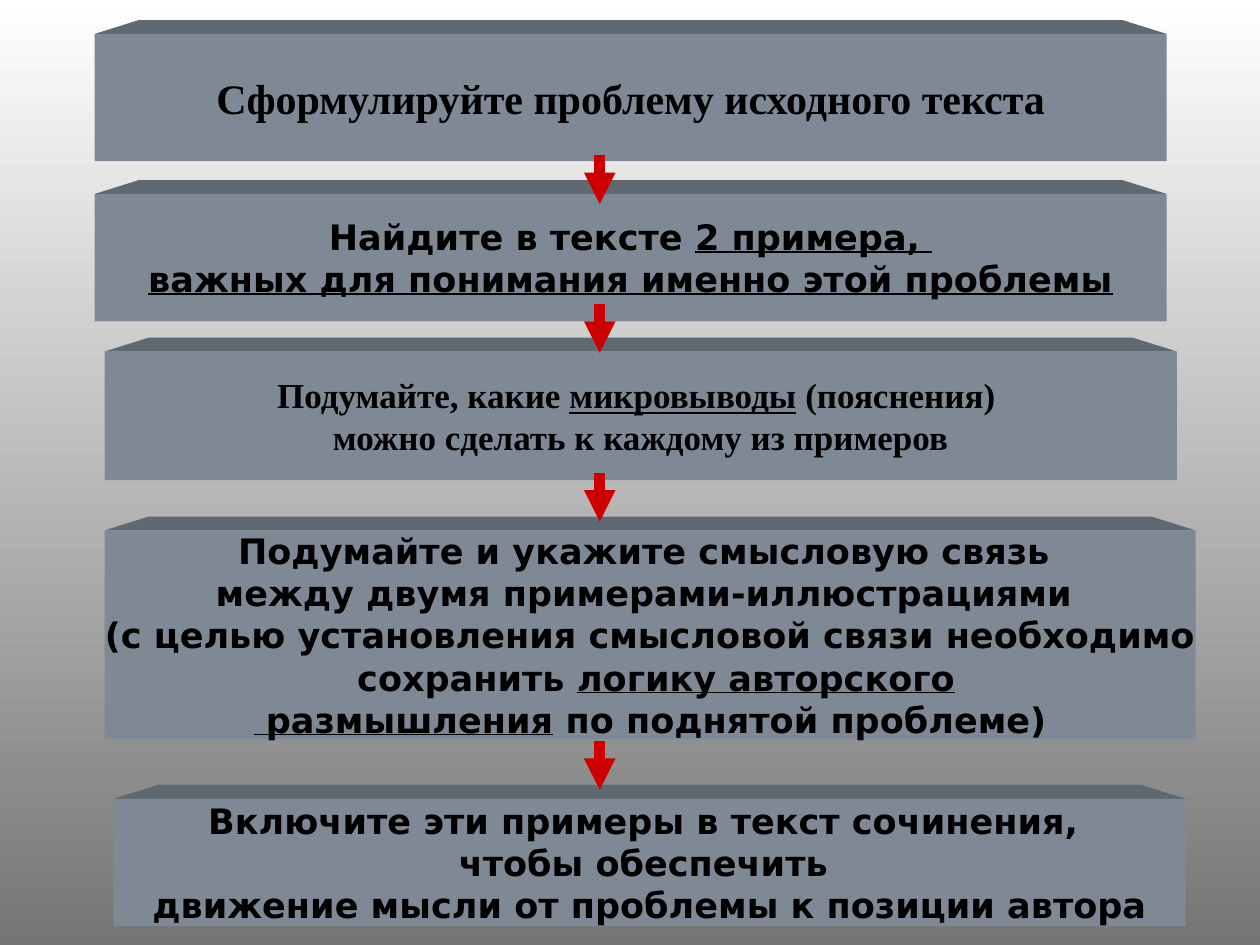
from dataclasses import dataclass

from lxml import etree
from pptx import Presentation
from pptx.dml.color import RGBColor
from pptx.enum.shapes import MSO_CONNECTOR, MSO_SHAPE
from pptx.enum.text import MSO_ANCHOR, PP_ALIGN
from pptx.oxml.ns import qn
from pptx.util import Inches, Pt

RECTANGLE = MSO_SHAPE.RECTANGLE
TRAPEZOID = MSO_SHAPE.TRAPEZOID
STRAIGHT = MSO_CONNECTOR.STRAIGHT
MIDDLE = MSO_ANCHOR.MIDDLE
CENTER = PP_ALIGN.CENTER


@dataclass(frozen=True)
class Theme:
    sky: RGBColor = RGBColor(0xFF, 0xFF, 0xFF)
    ground: RGBColor = RGBColor(0x75, 0x75, 0x75)
    front: RGBColor = RGBColor(0x7F, 0x89, 0x95)
    top: RGBColor = RGBColor(0x60, 0x69, 0x72)
    text: RGBColor = RGBColor(0, 0, 0)
    arrow: RGBColor = RGBColor(0xCC, 0, 0)
    serif: str = "Times New Roman"
    sans: str = "DejaVu Sans"
    heading_size: int = 24
    body_size: int = 20
    arrow_width: int = 6


THEME = Theme()

# Depth of the slabs and the geometry of the arrows, in inches
TOP_HEIGHT, TOP_INSET = 0.11, 0.35
ARROW_X, ARROW_LENGTH = 4.76, 0.39
ARROW_STARTS = (1.23, 2.41, 3.75, 5.88)

# Each step: left, top, width, height, font, size, lines.
# A line is a list of spans; a span is its text and whether it is underlined.
STEPS = [
    (0.75, 0.27, 8.51, 1.01, THEME.serif, THEME.heading_size, [
        [("Сформулируйте проблему исходного текста", False)],
    ]),
    (0.75, 1.54, 8.51, 1.01, THEME.sans, THEME.body_size, [
        [("Найдите в тексте ", False), ("2 примера, ", True)],
        [("важных для понимания именно этой проблемы", True)],
    ]),
    (0.83, 2.79, 8.51, 1.02, THEME.serif, THEME.body_size, [
        [("Подумайте, какие ", False), ("микровыводы", True),
         (" (пояснения) ", False)],
        [("можно сделать к каждому из примеров", False)],
    ]),
    (0.83, 4.21, 8.66, 1.66, THEME.sans, THEME.body_size, [
        [("Подумайте и укажите смысловую связь ", False)],
        [("между двумя примерами-иллюстрациями ", False)],
        [("(с целью установления смысловой связи необходимо", False)],
        [(" сохранить ", False), ("логику авторского", True)],
        [(" размышления", True), (" по поднятой проблеме)", False)],
    ]),
    (0.9, 6.34, 8.51, 1.01, THEME.sans, THEME.body_size, [
        [("Включите эти примеры в текст сочинения, ", False)],
        [("чтобы обеспечить ", False)],
        [("движение мысли от проблемы к позиции автора", False)],
    ]),
]


def paint_background(page):
    fill = page.background.fill
    fill.gradient()
    fill.gradient_angle = 270
    for stop, color in zip(fill.gradient_stops, (THEME.sky, THEME.ground)):
        stop.color.rgb = color


def add_face(page, kind, left, top, width, height, color):
    face = page.shapes.add_shape(
        kind, Inches(left), Inches(top), Inches(width), Inches(height))
    face.shadow.inherit = False
    face.fill.solid()
    face.fill.fore_color.rgb = color
    face.line.fill.background()
    return face


def write_lines(box, lines, font, size):
    frame = box.text_frame
    frame.word_wrap = False
    frame.vertical_anchor = MIDDLE
    for index, line in enumerate(lines):
        para = frame.add_paragraph() if index else frame.paragraphs[0]
        para.alignment = CENTER
        para.font.name = font
        para.font.size = Pt(size)
        para.font.bold = True
        para.font.color.rgb = THEME.text
        for text, underlined in line:
            span = para.add_run()
            span.text = text
            # Shape style colours spans white unless each one is set
            span.font.color.rgb = THEME.text
            if underlined:
                span.font.underline = True


def add_step(page, left, top, width, height, font, size, lines):
    lid = add_face(page, TRAPEZOID, left, top - TOP_HEIGHT, width, TOP_HEIGHT,
                   THEME.top)
    lid.adjustments[0] = TOP_INSET / TOP_HEIGHT
    box = add_face(page, RECTANGLE, left, top, width, height, THEME.front)
    write_lines(box, lines, font, size)


def add_arrow(page, top):
    arrow = page.shapes.add_connector(
        STRAIGHT, Inches(ARROW_X), Inches(top),
        Inches(ARROW_X), Inches(top + ARROW_LENGTH))
    arrow.line.color.rgb = THEME.arrow
    arrow.line.width = Pt(THEME.arrow_width)
    properties = arrow.element.spPr
    outline = properties.find(qn("a:ln"))
    etree.SubElement(outline, qn("a:tailEnd"), type="triangle")
    etree.SubElement(properties, qn("a:effectLst"))


def main():
    deck = Presentation()
    deck.slide_width, deck.slide_height = Inches(10), Inches(7.5)
    page = deck.slides.add_slide(deck.slide_layouts[6])
    paint_background(page)
    for step in STEPS:
        add_step(page, *step)
    for top in ARROW_STARTS:
        add_arrow(page, top)
    deck.save("out.pptx")


if __name__ == "__main__":
    main()
